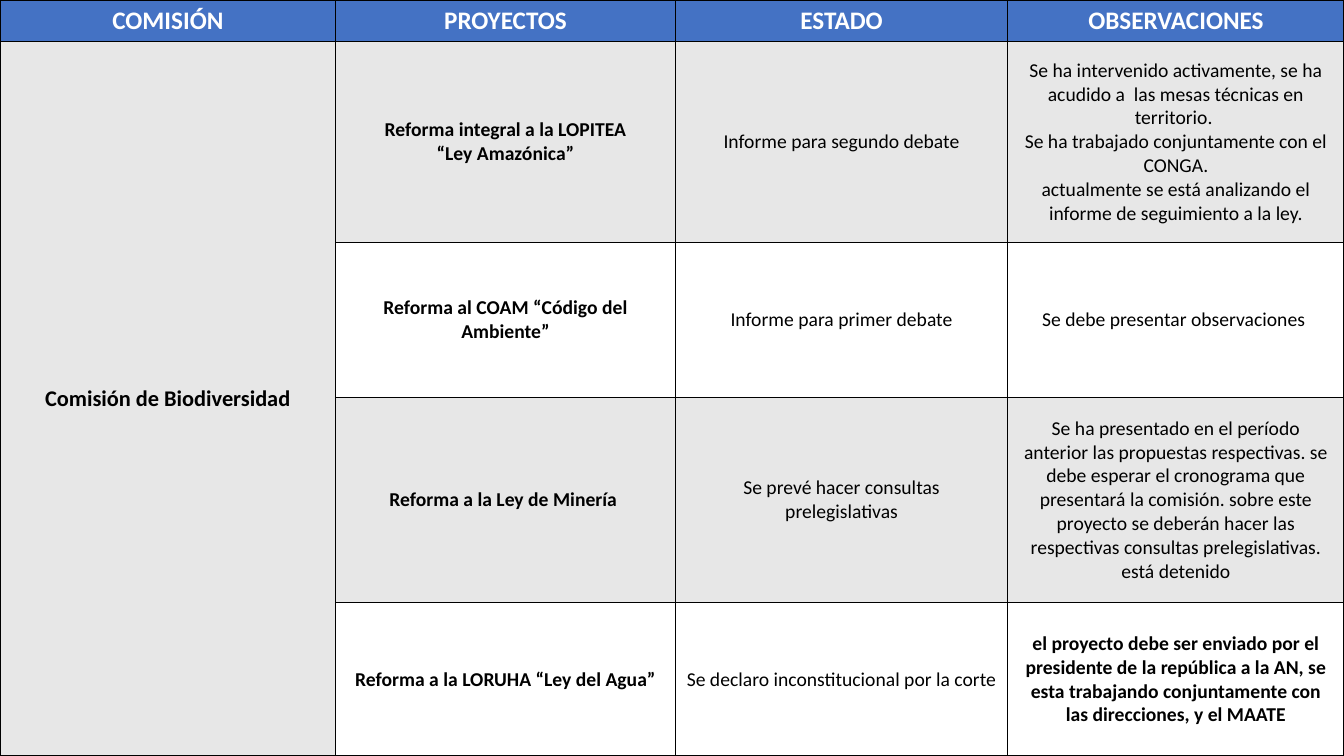
import dataclasses

import lxml.etree
import pptx
import pptx.dml.color
import pptx.enum.text
import pptx.oxml.ns
import pptx.util

Cm = pptx.util.Cm


@dataclasses.dataclass(frozen=True)
class Theme:
    font: str = "Calibri"
    header_fill: str = "4472C4"
    band_fill: str = "E7E7E7"
    plain_fill: str = "FFFFFF"
    header_text: str = "FFFFFF"
    body_text: str = "000000"
    border: str = "000000"
    border_width: float = 1
    header_size: int = 18
    commission_size: int = 16
    body_size: int = 14


class PageBuilder:
    def __init__(self, page, theme):
        self.page = page
        self.theme = theme

    def table(self, left, top, widths, heights):
        frame = self.page.shapes.add_table(
            len(heights), len(widths), Cm(left), Cm(top), Cm(sum(widths)), Cm(sum(heights)))
        table = frame.table
        for column, width in zip(table.columns, widths):
            column.width = Cm(width)
        for row, height in zip(table.rows, heights):
            row.height = Cm(height)
        return table

    def cell(self, cell, lines, fill, size, color, bold=False, middle=True):
        cell.fill.solid()
        cell.fill.fore_color.rgb = pptx.dml.color.RGBColor.from_string(fill)
        self.borders(cell)
        if middle:
            cell.vertical_anchor = pptx.enum.text.MSO_ANCHOR.MIDDLE
        cell.text = "\n".join(lines)
        for para in cell.text_frame.paragraphs:
            para.alignment = pptx.enum.text.PP_ALIGN.CENTER
            para.font.name = self.theme.font
            para.font.size = pptx.util.Pt(size)
            para.font.bold = bold
            para.font.color.rgb = pptx.dml.color.RGBColor.from_string(color)

    def borders(self, cell):
        qn = pptx.oxml.ns.qn
        properties = cell._tc.get_or_add_tcPr()
        # Border lines come before the fill
        for index, side in enumerate(("a:lnL", "a:lnR", "a:lnT", "a:lnB")):
            line = lxml.etree.Element(qn(side), w=str(pptx.util.Pt(self.theme.border_width)))
            solid = lxml.etree.SubElement(line, qn("a:solidFill"))
            lxml.etree.SubElement(solid, qn("a:srgbClr"), val=self.theme.border)
            properties.insert(index, line)


HEADERS = ["COMISIÓN", "PROYECTOS", "ESTADO", "OBSERVACIONES"]
COMMISSION = "Comisión de Biodiversidad"

# Each project: name, state, observations
PROJECTS = [
    (["Reforma integral a la LOPITEA", "“Ley Amazónica”"],
     ["Informe para segundo debate"],
     ["Se ha intervenido activamente, se ha acudido a  las mesas técnicas en territorio. ",
      "Se ha trabajado conjuntamente con el CONGA.",
      "actualmente se está analizando el informe de seguimiento a la ley."]),
    (["Reforma al COAM “Código del Ambiente”"],
     ["Informe para primer debate"],
     ["Se debe presentar observaciones "]),
    (["Reforma a la Ley de Minería "],
     ["Se prevé hacer consultas prelegislativas"],
     ["Se ha presentado en el período anterior las propuestas respectivas. se debe esperar "
      "el cronograma que presentará la comisión. sobre este proyecto se deberán hacer las "
      "respectivas consultas prelegislativas. está detenido"]),
    (["Reforma a la LORUHA “Ley del Agua”"],
     ["Se declaro inconstitucional por la corte"],
     ["el proyecto debe ser enviado por el presidente de la república a la AN, se esta "
      "trabajando conjuntamente con las direcciones, y el MAATE"]),
]
COLUMN_WIDTHS = [8.46, 8.56, 8.38, 8.47]
ROW_HEIGHTS = [1.04, 5.08, 3.89, 5.18, 3.86]


def main():
    deck = pptx.Presentation()
    deck.slide_width, deck.slide_height = Cm(33.87), Cm(19.05)
    page = deck.slides.add_slide(deck.slide_layouts[6])
    theme = Theme()
    builder = PageBuilder(page, theme)
    table = builder.table(0, 0, COLUMN_WIDTHS, ROW_HEIGHTS)

    # Header row
    for column, header in enumerate(HEADERS):
        builder.cell(table.cell(0, column), [header], theme.header_fill,
                     theme.header_size, theme.header_text, bold=True, middle=False)

    # Commission, merged down all the projects
    last_row = len(PROJECTS)
    table.cell(1, 0).merge(table.cell(last_row, 0))
    for row in range(1, last_row + 1):
        builder.cell(table.cell(row, 0), [COMMISSION] if row == 1 else [], theme.band_fill,
                     theme.commission_size, theme.body_text, bold=True)

    # Projects in alternating bands; names and the last observation are bold
    for row, project in enumerate(PROJECTS, start=1):
        fill = theme.band_fill if row % 2 else theme.plain_fill
        for column, lines in enumerate(project, start=1):
            bold = column == 1 or (row == last_row and column == 3)
            builder.cell(table.cell(row, column), lines, fill,
                         theme.body_size, theme.body_text, bold=bold)

    deck.save("out.pptx")


if __name__ == "__main__":
    main()
